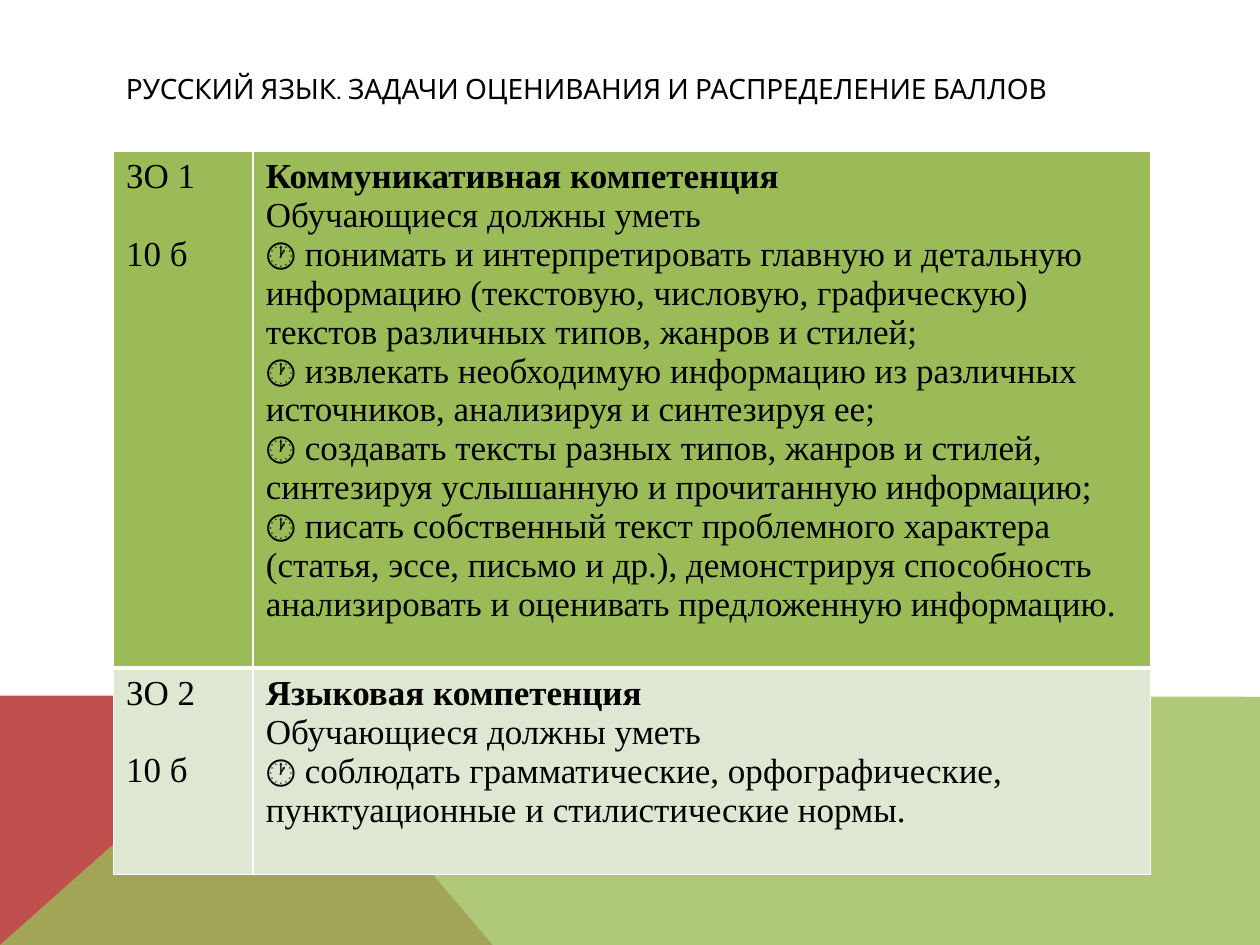
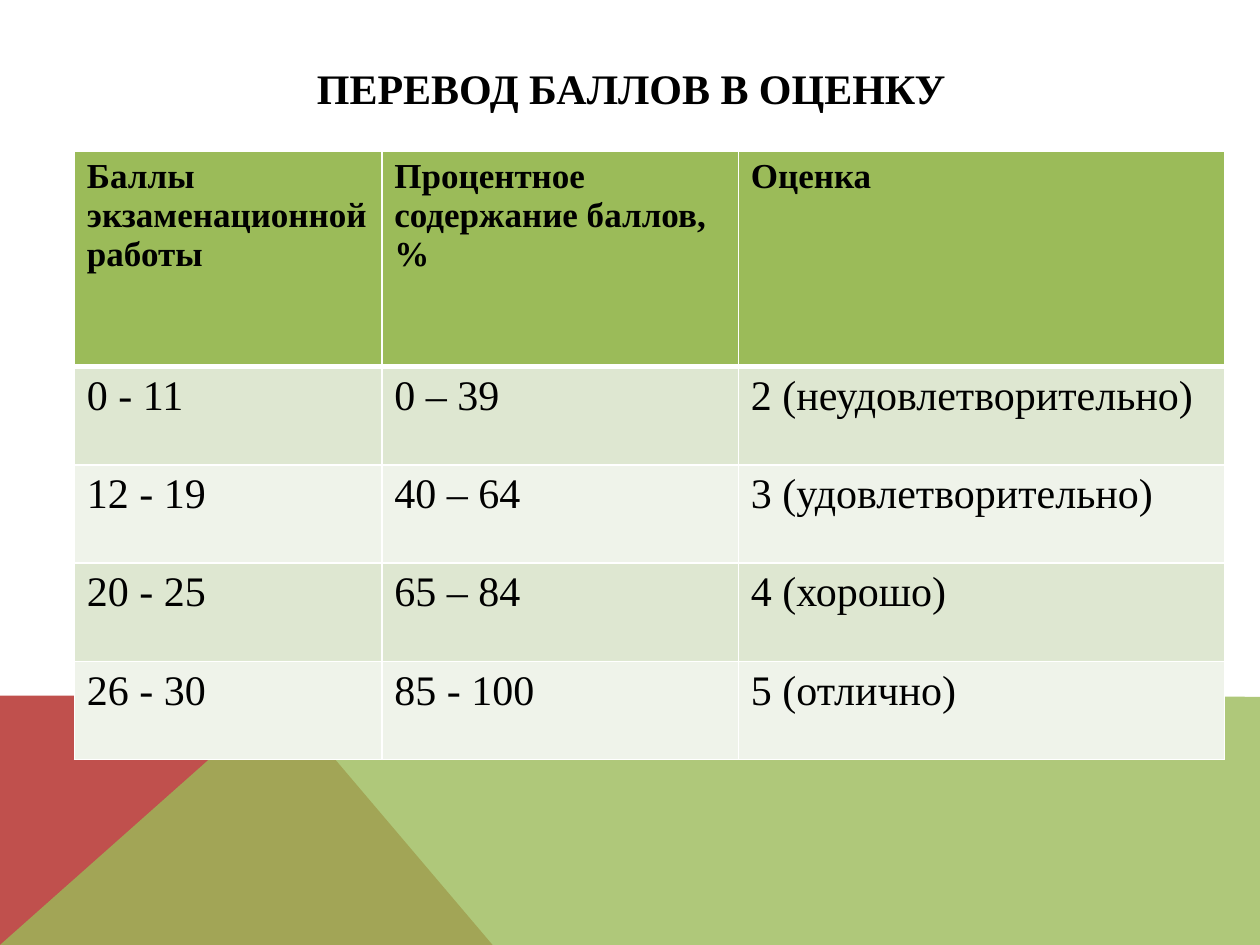
from dataclasses import dataclass

from lxml import etree
from pptx import Presentation
from pptx.dml.color import RGBColor
from pptx.enum import text as t
from pptx.oxml.ns import qn
from pptx.util import Inches, Pt

GREEN, RED, BLACK, WHITE = "9BBB59", "C0504D", "000000", "FFFFFF"
PALE, LIGHT = "DEE7D1", "EFF3EA"
SERIF, SANS = "Times New Roman", "Cabin"
GAP = Pt(22)  # height of one line of 20 pt text
LEFT, CENTER = t.PP_ALIGN.LEFT, t.PP_ALIGN.CENTER


@dataclass
class Para:
    text: str
    size: int = 20
    bold: bool = False
    face: str = SERIF
    align: t.PP_ALIGN = LEFT
    before: int = 0


@dataclass
class Grid:
    left: float
    cols: list[float]
    rows: list[float]
    fills: list[str]
    cells: list[list[list[Para]]]


@dataclass
class Page:
    title: Para
    grid: Grid


def color(code: str) -> RGBColor:
    return RGBColor.from_string(code)


def paint(fill, code: str) -> None:
    fill.solid()
    fill.fore_color.rgb = color(code)


def write(frame, paras: list[Para]) -> None:
    frame.word_wrap = True
    for i, item in enumerate(paras):
        par = frame.add_paragraph() if i else frame.paragraphs[0]
        par.text = item.text
        par.alignment = item.align
        par.space_before = item.before
        font = par.font
        font.size, font.bold, font.name = Pt(item.size), item.bold, item.face
        font.color.rgb = color(BLACK)


def band(slide, points: list[tuple[float, float]], code: str, alpha: int = 100) -> None:
    """Draw a filled outline; alpha is its opacity in percent."""
    spots = [(Inches(x), Inches(y)) for x, y in points]
    pen = slide.shapes.build_freeform(*spots[0])
    pen.add_line_segments(spots[1:], close=True)
    shape = pen.convert_to_shape()
    shape.shadow.inherit = False
    shape.line.fill.background()
    paint(shape.fill, code)
    if alpha < 100:
        tone = shape.fill._xPr.find(".//" + qn("a:srgbClr"))
        etree.SubElement(tone, qn("a:alpha"), val=str(alpha * 1000))


def border(cell, top: int, bottom: int) -> None:
    """Rule the cell in white, with top and bottom widths in points."""
    props = cell._tc.get_or_add_tcPr()
    sides = {"lnL": 1, "lnR": 1, "lnT": top, "lnB": bottom}
    for i, (tag, width) in enumerate(sides.items()):
        line = etree.Element(qn(f"a:{tag}"), w=str(Pt(width)))
        fill = etree.SubElement(line, qn("a:solidFill"))
        etree.SubElement(fill, qn("a:srgbClr"), val=WHITE)
        props.insert(i, line)


def draw_grid(slide, grid: Grid) -> None:
    frame = slide.shapes.add_table(
        len(grid.rows), len(grid.cols), Inches(grid.left), Inches(1.2),
        Inches(sum(grid.cols)), Inches(sum(grid.rows)))
    table = frame.table
    table.first_row = table.horz_banding = False
    for col, width in zip(table.columns, grid.cols):
        col.width = Inches(width)
    for r, (row, height) in enumerate(zip(table.rows, grid.rows)):
        row.height = Inches(height)
        for cell, paras in zip(row.cells, grid.cells[r]):
            write(cell.text_frame, paras)
            paint(cell.fill, grid.fills[r])
            border(cell, 3 if r == 1 else 1, 3 if r == 0 else 1)


def draw_page(deck, page: Page) -> None:
    slide = deck.slides.add_slide(deck.slide_layouts[6])
    paint(slide.background.fill, WHITE)
    band(slide, [(0, 7.5), (0, 5.52), (2.23, 5.52), (3.91, 7.5)], RED)
    band(slide, [(0, 7.5), (2.23, 5.52), (10, 5.53), (10, 7.5)], GREEN, 80)
    box = slide.shapes.add_textbox(Inches(0.9), Inches(0.4), Inches(8.22), Inches(0.6))
    box.text_frame.vertical_anchor = t.MSO_ANCHOR.MIDDLE
    write(box.text_frame, [page.title])
    draw_grid(slide, page.grid)


def goal(num: int, name: str, skills: list[str]) -> list[list[Para]]:
    """Make the table row of one assessment goal."""
    return [
        [Para(f"ЗО {num}"), Para("10 б", before=GAP)],
        [Para(name, bold=True), Para("Обучающиеся должны уметь"),
         *(Para(f"🕐 {skill}") for skill in skills)],
    ]


GOALS = Grid(0.9, [1.11, 7.12], [3.8, 1.64], [GREEN, PALE], [
    goal(1, "Коммуникативная компетенция", [
        "понимать и интерпретировать главную и детальную информацию "
        "(текстовую, числовую, графическую) текстов различных типов, жанров и стилей;",
        "извлекать необходимую информацию из различных источников, "
        "анализируя и синтезируя ее;",
        "создавать тексты разных типов, жанров и стилей, "
        "синтезируя услышанную и прочитанную информацию;",
        "писать собственный текст проблемного характера (статья, эссе, письмо и др.), "
        "демонстрируя способность анализировать и оценивать предложенную информацию.",
    ]),
    goal(2, "Языковая компетенция", [
        "соблюдать грамматические, орфографические, "
        "пунктуационные и стилистические нормы.",
    ]),
])

HEADS = [["Баллы экзаменационной работы"],
         ["Процентное содержание баллов,", "%"], ["Оценка"]]
MARKS = [
    ("0 - 11", "0 – 39", "2 (неудовлетворительно)"),
    ("12 - 19", "40 – 64", "3 (удовлетворительно)"),
    ("20 - 25", "65 – 84", "4 (хорошо)"),
    ("26 - 30", "85 - 100", "5 (отлично)"),
]
SCALE = Grid(
    0.59, [2.44, 2.83, 3.86], [1.71] + [0.78] * len(MARKS),
    [GREEN] + [PALE, LIGHT] * 2,
    [[[Para(line, bold=True) for line in head] for head in HEADS]]
    + [[[Para(value, 24)] for value in mark] for mark in MARKS])

PAGES = [
    Page(Para("РУССКИЙ ЯЗЫК. ЗАДАЧИ ОЦЕНИВАНИЯ И РАСПРЕДЕЛЕНИЕ БАЛЛОВ", 16, face=SANS),
         GOALS),
    Page(Para("ПЕРЕВОД БАЛЛОВ В ОЦЕНКУ", 24, True, align=CENTER), SCALE),
]


def main() -> None:
    deck = Presentation()
    deck.slide_width, deck.slide_height = Inches(10), Inches(7.5)
    for page in PAGES:
        draw_page(deck, page)
    deck.save("out.pptx")


if __name__ == "__main__":
    main()
